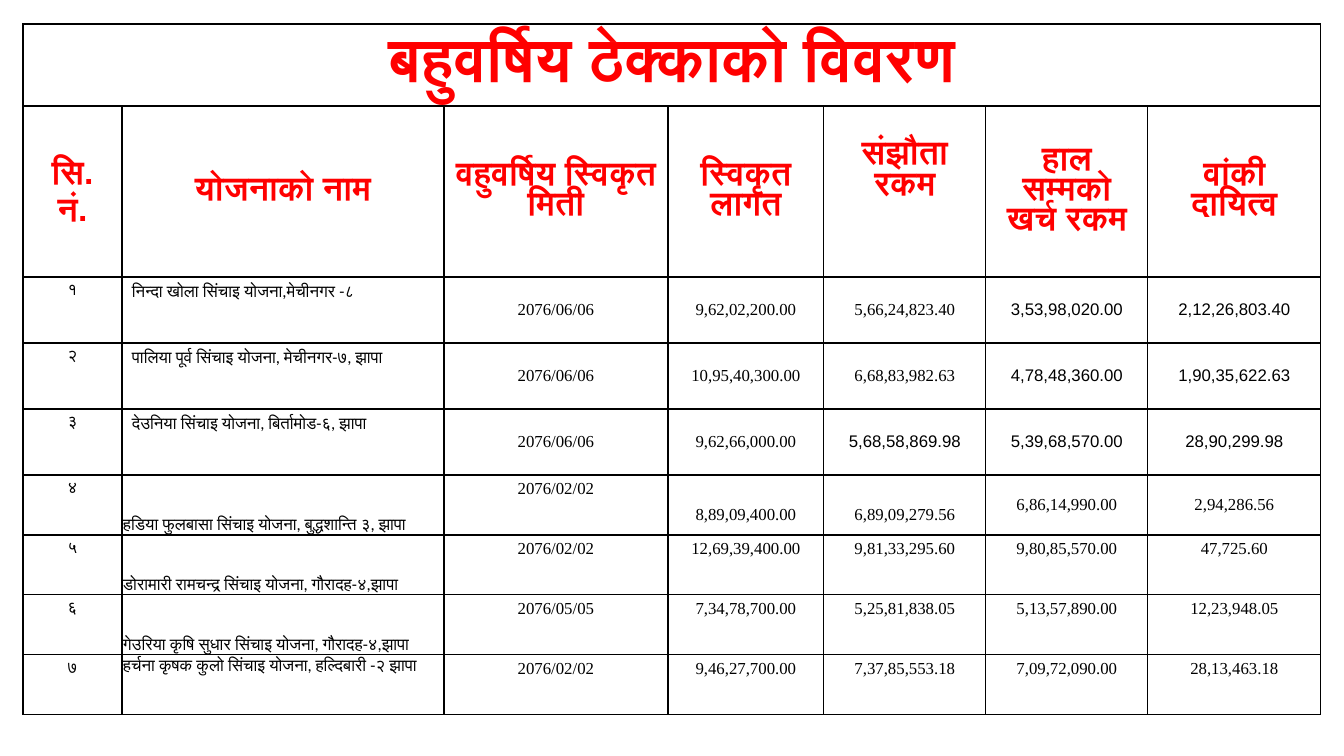
from lxml import etree
from pptx import Presentation
from pptx.dml.color import RGBColor
from pptx.enum.text import MSO_ANCHOR, PP_ALIGN
from pptx.oxml.ns import qn
from pptx.util import Pt

RED = RGBColor(0xFF, 0, 0)
BLACK = RGBColor(0, 0, 0)
TOP, MID, LOW = MSO_ANCHOR.TOP, MSO_ANCHOR.MIDDLE, MSO_ANCHOR.BOTTOM
LEFT, CENTER = PP_ALIGN.LEFT, PP_ALIGN.CENTER
ARIAL, TIMES, CALIBRI = "Arial", "Times New Roman", "Calibri"
PX = 914400 / 100.8

TITLE = "बहुवर्षिय ठेक्काको विवरण"
HEADS = ["सि. नं.", "योजनाको नाम", "वहुवर्षिय स्विकृत मिती", "स्विकृत लागत",
         "संझौता रकम", "हाल सम्मको खर्च रकम", "वांकी दायित्व"]
PLANS = [
    ("१", "निन्दा खोला सिंचाइ योजना,मेचीनगर -८", "2076/06/06",
     "9,62,02,200.00", "5,66,24,823.40", "3,53,98,020.00", "2,12,26,803.40"),
    ("२", "पालिया पूर्व सिंचाइ योजना, मेचीनगर-७, झापा", "2076/06/06",
     "10,95,40,300.00", "6,68,83,982.63", "4,78,48,360.00", "1,90,35,622.63"),
    ("३", "देउनिया सिंचाइ योजना, बिर्तामोड-६, झापा", "2076/06/06",
     "9,62,66,000.00", "5,68,58,869.98", "5,39,68,570.00", "28,90,299.98"),
    ("४", "हडिया फुलबासा सिंचाइ योजना, बुद्धशान्ति ३, झापा", "2076/02/02",
     "8,89,09,400.00", "6,89,09,279.56", "6,86,14,990.00", "2,94,286.56"),
    ("५", "डोरामारी रामचन्द्र सिंचाइ योजना, गौरादह-४,झापा", "2076/02/02",
     "12,69,39,400.00", "9,81,33,295.60", "9,80,85,570.00", "47,725.60"),
    ("६", "गेउरिया कृषि सुधार सिंचाइ योजना, गौरादह-४,झापा", "2076/05/05",
     "7,34,78,700.00", "5,25,81,838.05", "5,13,57,890.00", "12,23,948.05"),
    ("७", "हर्चना कृषक कुलो सिंचाइ योजना, हल्दिबारी -२ झापा", "2076/02/02",
     "9,46,27,700.00", "7,37,85,553.18", "7,09,72,090.00", "28,13,463.18"),
]
# Anchors of the date, the two agreed sums, and the two running sums
ANCHORS = [(MID,) * 5] * 3 + [(TOP,) + (MID,) * 4] + [(TOP,) * 5] * 3
NAMES = [TOP] * 3 + [LOW] * 3 + [TOP]
SANS = {0: (5, 6), 1: (5, 6), 2: (4, 5, 6)}
COLS = [99, 322, 224, 156, 162, 162, 173]
ROWS = [82, 171] + [66] * 3 + [60] * 4
X, Y = 23, 24


def px(n):
    return round(n * PX)


def border(cell):
    """Draw a thin black line on all four sides and leave the cell unfilled."""
    props = cell._tc.get_or_add_tcPr()
    for side in ("a:lnL", "a:lnR", "a:lnT", "a:lnB"):
        line = etree.SubElement(props, qn(side), w=str(Pt(1)))
        fill = etree.SubElement(line, qn("a:solidFill"))
        etree.SubElement(fill, qn("a:srgbClr"), val=str(BLACK))
    cell.fill.background()


def write(cell, text, size, face, color=BLACK, bold=False, align=CENTER,
          anchor=TOP, pads=(10, 5, 10, 5), lead=None):
    cell.vertical_anchor = anchor
    (cell.margin_left, cell.margin_top,
     cell.margin_right, cell.margin_bottom) = map(px, pads)
    para = cell.text_frame.paragraphs[0]
    para.alignment = align
    if lead:
        para.line_spacing = lead
    run = para.add_run()
    run.text = text
    font = run.font
    font.size, font.name, font.bold = Pt(size), face, bold
    font.color.rgb = color


def fill_plan(grid, i, plan):
    row = i + 2
    write(grid.cell(row, 0), plan[0], 12, ARIAL)
    pads = (10, 5, 10, 5) if i < 3 else (1, 1, 1, 0)
    write(grid.cell(row, 1), plan[1], 12, CALIBRI, align=LEFT,
          anchor=NAMES[i], pads=pads)
    for col in range(2, 7):
        face = ARIAL if col in SANS.get(i, ()) else TIMES
        pads = (0, 19, 0, 0) if i == 3 and col in (3, 4) else (10, 5, 10, 5)
        write(grid.cell(row, col), plan[col], 12, face,
              anchor=ANCHORS[i][col - 2], pads=pads)


def main():
    deck = Presentation()
    deck.slide_width, deck.slide_height = px(1344), px(756)
    slide = deck.slides.add_slide(deck.slide_layouts[6])
    grid = slide.shapes.add_table(len(ROWS), len(COLS), px(X), px(Y),
                                  px(sum(COLS)), px(sum(ROWS))).table
    grid.first_row = grid.horz_banding = False
    for col, wide in zip(grid.columns, COLS):
        col.width = px(wide)
    for row, high in zip(grid.rows, ROWS):
        row.height = px(high)
    for cell in grid.iter_cells():
        border(cell)
    grid.cell(0, 0).merge(grid.cell(0, len(COLS) - 1))
    write(grid.cell(0, 0), TITLE, 44, ARIAL, RED, True, anchor=MID,
          pads=(10, 0, 10, 0), lead=0.9)
    for col, head in enumerate(HEADS):
        pads = (10, 5, 10, 46) if col == 4 else (10, 5, 10, 5)
        write(grid.cell(1, col), head, 24, ARIAL, RED, True, anchor=MID,
              pads=pads, lead=0.9 if col else None)
    for i, plan in enumerate(PLANS):
        fill_plan(grid, i, plan)
    deck.save("out.pptx")


if __name__ == "__main__":
    main()
